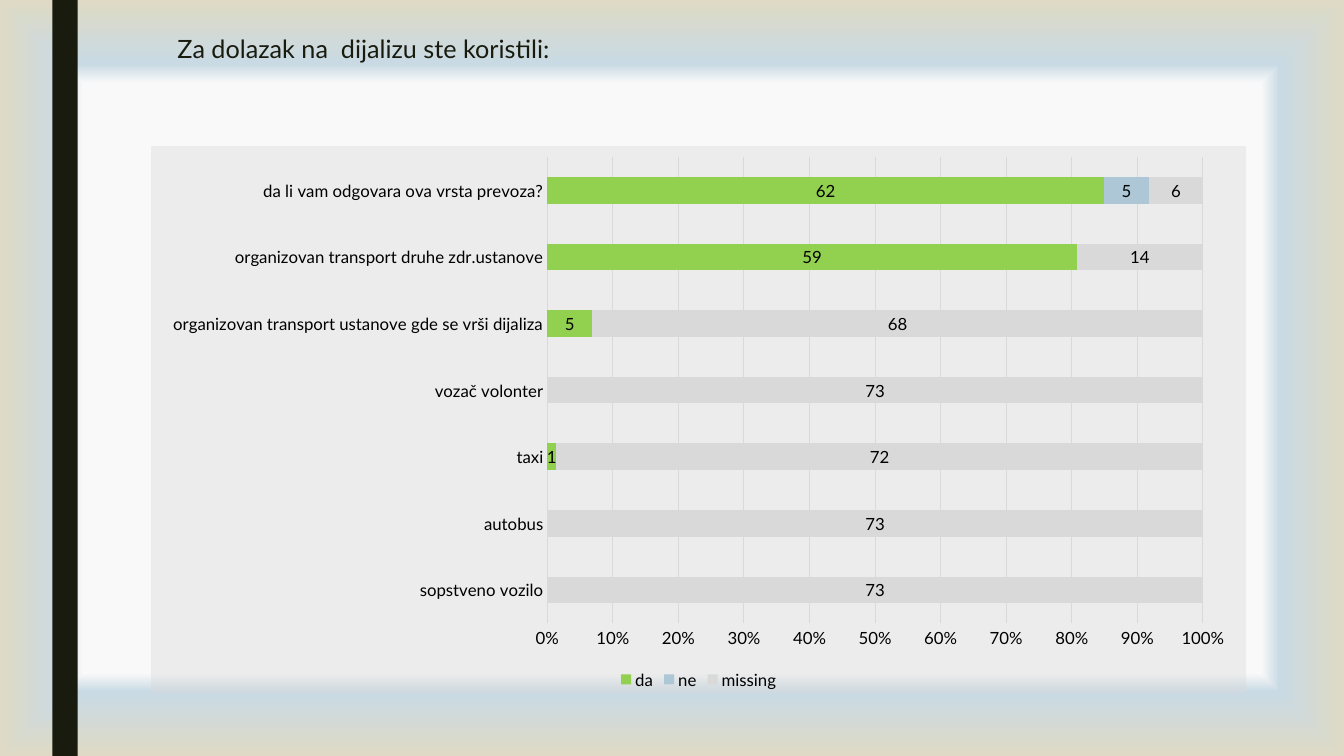
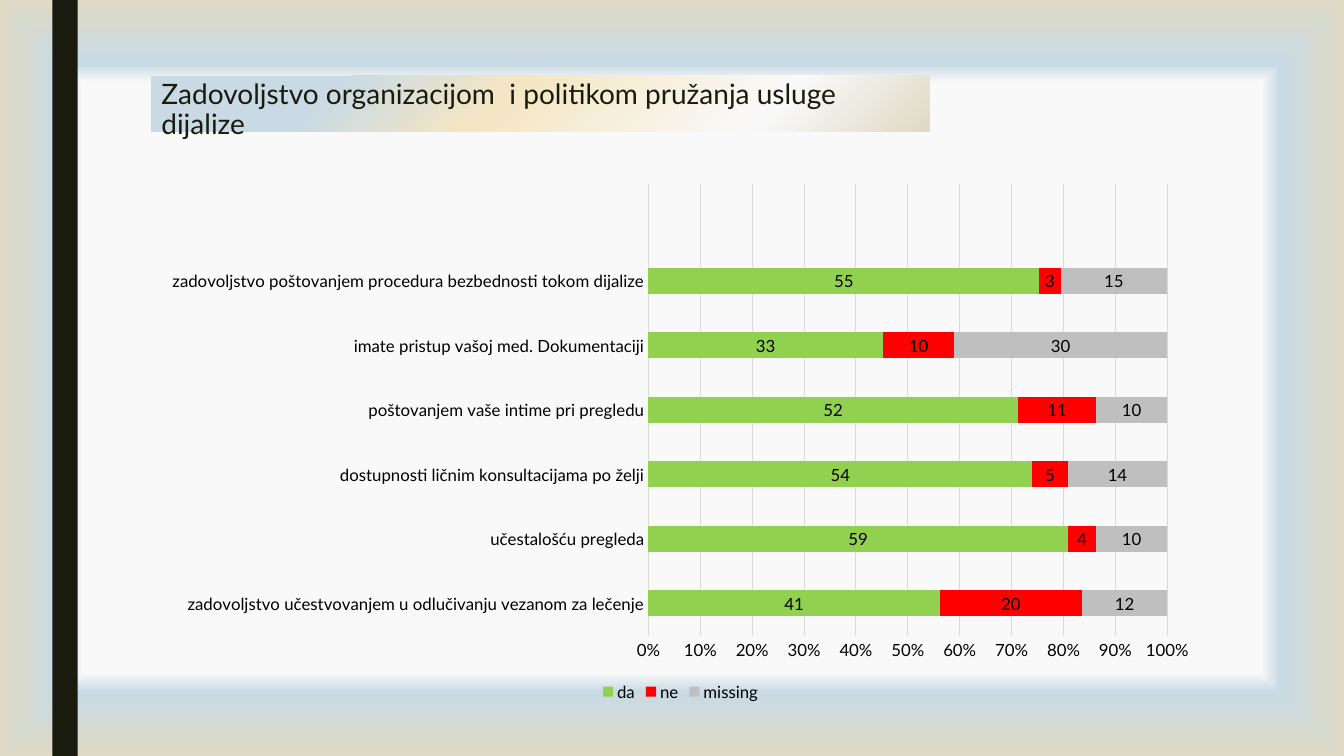
from dataclasses import dataclass

from lxml import etree
from pptx import Presentation
from pptx.chart.data import CategoryChartData
from pptx.dml.color import RGBColor
from pptx.enum.chart import XL_CHART_TYPE, XL_LABEL_POSITION, XL_LEGEND_POSITION, XL_TICK_MARK
from pptx.enum.shapes import MSO_SHAPE
from pptx.enum.text import MSO_ANCHOR, MSO_AUTO_SIZE, PP_ALIGN
from pptx.oxml import parse_xml
from pptx.oxml.ns import qn
from pptx.util import Inches, Pt

BAR = XL_CHART_TYPE.BAR_STACKED_100
CENTER = XL_LABEL_POSITION.CENTER
BOTTOM = XL_LEGEND_POSITION.BOTTOM
NO_TICK = XL_TICK_MARK.NONE
RECT = MSO_SHAPE.RECTANGLE
TOP = MSO_ANCHOR.TOP
NO_FIT = MSO_AUTO_SIZE.NONE
LEFT = PP_ALIGN.LEFT
TITLE_ONLY = 5
A_NS = "http://schemas.openxmlformats.org/drawingml/2006/main"
C_NS = "http://schemas.openxmlformats.org/drawingml/2006/chart"


@dataclass(frozen=True)
class Theme:
    font: str = "Lato"
    dark: str = "191B0E"
    text: str = "000000"
    grid: str = "D9D9D9"
    yes: str = "92D050"
    no: str = "ADC7D6"
    alert: str = "FF0000"
    blank: str = "D9D9D9"
    gray: str = "BFBFBF"
    base: int = 10
    label: int = 12
    line: float = 0.75
    lead: float = 0.89
    back: tuple = ((78, "F9F9F9"), (83, "C9DAE4"), (100, "DEDAC5"), (100, "F5E6C3"))
    strip: tuple = ((23, "C9DAE4"), (45, "F5E6C3"), (78, "F9F9F9"), (100, "DEDAC5"))


THEME = Theme()


def rgb(code):
    return RGBColor.from_string(code)


def box(*sides):
    return [Inches(side) for side in sides]


def style(font, size, color=THEME.text):
    font.name = THEME.font
    font.size = Pt(size)
    font.color.rgb = rgb(color)


def blend(fill, root, stops, angle=None):
    """Fill with a gradient: linear at an angle, or from the centre without one."""
    fill.gradient()
    old = next(root.iter(qn("a:gradFill")))
    new = etree.Element(qn("a:gradFill"), rotWithShape="1")
    group = etree.SubElement(new, qn("a:gsLst"))
    for place, color in stops:
        stop = etree.SubElement(group, qn("a:gs"), pos=str(place * 1000))
        etree.SubElement(stop, qn("a:srgbClr"), val=color)
    if angle is None:
        way = etree.SubElement(new, qn("a:path"), path="shape")
        sides = dict.fromkeys("ltrb", "50000")
        etree.SubElement(way, qn("a:fillToRect"), **sides)
    else:
        etree.SubElement(new, qn("a:lin"), ang=str(angle * 60000), scaled="0")
    old.getparent().replace(old, new)


def set_master(deck, slide):
    """Give the master its background and the dark band, drawn first on a slide."""
    master = deck.slide_master
    blend(master.background.fill, master.element, THEME.back)
    band = slide.shapes.add_shape(RECT, *box(0.52, 0, 0.25, 7.5))
    band.shadow.inherit = False
    band.fill.solid()
    band.fill.fore_color.rgb = rgb(THEME.dark)
    band.line.fill.background()
    master.element.cSld.spTree.append(band.element)


def add_title(slide, text, area, size, strip=False):
    title = slide.shapes.title
    title.left, title.top, title.width, title.height = box(*area)
    if strip:
        blend(title.fill, title.element, THEME.strip, 45)
    frame = title.text_frame
    frame.text = text
    frame.word_wrap = True
    frame.auto_size = NO_FIT
    frame.vertical_anchor = TOP
    para = frame.paragraphs[0]
    para.alignment = LEFT
    para.line_spacing = THEME.lead
    style(para.runs[0].font, size, THEME.dark)


def tint(chart, color, share):
    """Fill the chart area with a color of the given opacity in percent."""
    area = parse_xml(
        f'<c:spPr xmlns:c="{C_NS}" xmlns:a="{A_NS}"><a:solidFill>'
        f'<a:srgbClr val="{color}"><a:alpha val="{share * 1000}"/></a:srgbClr>'
        '</a:solidFill><a:ln><a:noFill/></a:ln></c:spPr>')
    chart.element.find(qn("c:chart")).addnext(area)


def set_line(form, color):
    form.line.color.rgb = rgb(color)
    form.line.width = Pt(THEME.line)


def set_axes(chart):
    cats, vals = chart.category_axis, chart.value_axis
    for axis in (cats, vals):
        axis.major_tick_mark = axis.minor_tick_mark = NO_TICK
        style(axis.tick_labels.font, THEME.label)
    cats.has_major_gridlines = False
    set_line(cats.format, THEME.grid)
    vals.has_major_gridlines = True
    set_line(vals.major_gridlines.format, THEME.grid)
    vals.format.line.fill.background()
    vals.tick_labels.number_format = "0%"
    vals.tick_labels.number_format_is_linked = False


def add_bars(slide, area, rows, colors):
    """Draw rows of (name, da, ne, missing), listed from the bottom up."""
    data = CategoryChartData()
    names, *columns = zip(*rows)
    data.categories = names
    for name, column in zip(("da", "ne", "missing"), columns):
        data.add_series(name, column)
    chart = slide.shapes.add_chart(BAR, *box(*area), data).chart
    style(chart.font, THEME.base)
    chart.has_title = False
    chart.has_legend = True
    chart.legend.position = BOTTOM
    chart.legend.include_in_layout = False
    style(chart.legend.font, THEME.label)
    set_axes(chart)
    plot = chart.plots[0]
    plot.gap_width, plot.overlap = 150, 100
    plot.vary_by_categories = False
    for series, color in zip(plot.series, colors):
        series.invert_if_negative = False
        series.format.fill.solid()
        series.format.fill.fore_color.rgb = rgb(color)
        labels = series.data_labels
        labels.show_value = True
        labels.position = CENTER
        style(labels.font, THEME.label)
    return chart


def travel(slide):
    add_title(slide, "Za dolazak na  dijalizu ste koristili:", (1.66, 0.32, 4.81, 0.85), 18)
    rows = [
        ("sopstveno vozilo", None, None, 73),
        ("autobus", None, None, 73),
        ("taxi", 1, None, 72),
        ("vozač volonter", None, None, 73),
        ("organizovan transport ustanove gde se vrši dijaliza", 5, None, 68),
        ("organizovan transport druhe zdr.ustanove", 59, None, 14),
        ("da li vam odgovara ova vrsta prevoza?", 62, 5, 6),
    ]
    chart = add_bars(slide, (1.5, 1.45, 10.86, 5.43), rows, (THEME.yes, THEME.no, THEME.blank))
    tint(chart, THEME.blank, 39)


def policy(slide):
    add_title(slide, "Zadovoljstvo organizacijom  i politikom pružanja usluge dijalize",
              (1.5, 0.75, 7.72, 0.56), 20, strip=True)
    rows = [
        ("zadovoljstvo učestvovanjem u odlučivanju vezanom za lečenje", 41, 20, 12),
        ("učestalošću pregleda", 59, 4, 10),
        ("dostupnosti ličnim konsultacijama po želji", 54, 5, 14),
        ("poštovanjem vaše intime pri pregledu", 52, 11, 10),
        ("imate pristup vašoj med. Dokumentaciji", 33, 10, 30),
        ("zadovoljstvo poštovanjem procedura bezbednosti tokom dijalize", 55, 3, 15),
        ("", None, None, None),
    ]
    add_bars(slide, (1.5, 1.72, 10.5, 5.28), rows, (THEME.yes, THEME.alert, THEME.gray))


def main():
    deck = Presentation()
    deck.slide_width, deck.slide_height = box(13.33, 7.5)
    layout = deck.slide_layouts[TITLE_ONLY]
    slides = [deck.slides.add_slide(layout) for _ in range(2)]
    set_master(deck, slides[0])
    for draw, slide in zip((travel, policy), slides):
        draw(slide)
    deck.save("out.pptx")


if __name__ == "__main__":
    main()
